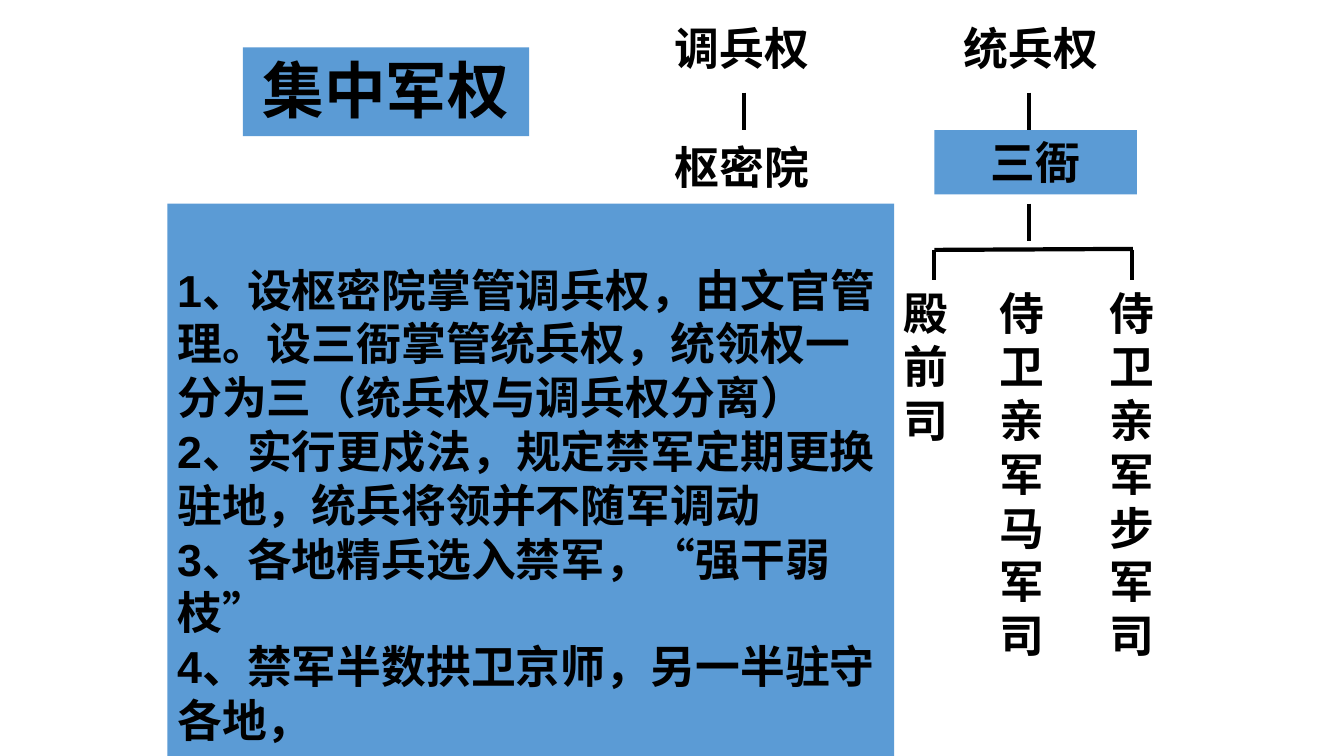
"""Build the slide on the centralisation of military power."""
import itertools

import pptx
import pptx.dml.color
import pptx.enum.shapes
import pptx.enum.text
import pptx.oxml.ns
import pptx.util
from lxml import etree

Pt = pptx.util.Pt
BLACK = pptx.dml.color.RGBColor(0x00, 0x00, 0x00)
BLUE = pptx.dml.color.RGBColor(0x5B, 0x9B, 0xD5)
CJK = "Noto Sans CJK SC"
LATIN = "Arial"
PUNCTUATION = "，。、（）“”"
CENTER = pptx.enum.text.PP_ALIGN.CENTER
LEFT = pptx.enum.text.PP_ALIGN.LEFT
INSETS = {"margin_left": Pt(7.2), "margin_right": Pt(7.2),
          "margin_top": Pt(3.6), "margin_bottom": Pt(3.6)}

MEASURES = [
    "1、设枢密院掌管调兵权，由文官管理。设三衙掌管统兵权，统领权一分为三（统兵权与调兵权分离）",
    "2、实行更戍法，规定禁军定期更换驻地，统兵将领并不随军调动",
    "3、各地精兵选入禁军，“强干弱枝”",
    "4、禁军半数拱卫京师，另一半驻守各地，",
]
HEADINGS = [("调兵权", 457.2, 11.5), ("枢密院", 457.2, 96.5), ("统兵权", 663.8, 11.5)]
OFFICES = [("殿前司", 638.6), ("侍卫亲军马军司", 707), ("侍卫亲军步军司", 785.5)]
LINES = [
    (531.4, 66.2, 531.4, 92.9),
    (735.1, 66.2, 735.1, 92.9),
    (735.1, 145.4, 735.1, 172.1),
    (667.4, 178.5, 809.3, 177.8),
    (667.4, 178.5, 667.4, 200.2),
    (808.6, 178.5, 808.6, 200.2),
]


def set_all(obj, values):
    """Set every attribute named in a dict of values."""
    for name, value in values.items():
        setattr(obj, name, value)


def is_latin(char):
    """Tell whether a character takes the Latin font."""
    return char.isdigit() or char in PUNCTUATION


def add_run(p, text, font, size):
    """Add a bold black run with Latin and East Asian fonts."""
    r = p.add_run()
    r.text = text
    set_all(r.font, {"name": font, "size": Pt(size), "bold": True})
    r.font.color.rgb = BLACK
    ea = etree.SubElement(r.font._element, pptx.oxml.ns.qn("a:ea"))
    ea.set("typeface", CJK)


def write(sp, lines, size=32, align=CENTER, wrap=True, **insets):
    """Write one paragraph per line into a shape."""
    tf = sp.text_frame
    set_all(tf, {**INSETS, "word_wrap": wrap,
                 "auto_size": pptx.enum.text.MSO_AUTO_SIZE.NONE,
                 "vertical_anchor": pptx.enum.text.MSO_ANCHOR.TOP, **insets})
    for i, line in enumerate(lines):
        p = tf.add_paragraph() if i else tf.paragraphs[0]
        set_all(p, {"alignment": align, "line_spacing": Pt(1.2 * size)})
        for latin, chars in itertools.groupby(line, is_latin):
            add_run(p, "".join(chars), LATIN if latin else CJK, size)


def fill_blue(sp):
    """Give a shape the plain blue fill."""
    sp.fill.solid()
    sp.fill.fore_color.rgb = BLUE


def add_title(s, text, left, top, width, height):
    """Place and format the title placeholder."""
    sp = s.shapes.title
    set_all(sp, {"left": Pt(left), "top": Pt(top),
                 "width": Pt(width), "height": Pt(height)})
    fill_blue(sp)
    write(sp, [text], size=44)


def add_panel(s, lines, left, top, width, height, **style):
    """Add a blue rectangle with text."""
    kind = pptx.enum.shapes.MSO_SHAPE.RECTANGLE
    sp = s.shapes.add_shape(kind, Pt(left), Pt(top), Pt(width), Pt(height))
    sp.shadow.inherit = False
    sp.line.fill.background()
    fill_blue(sp)
    write(sp, lines, **style)


def add_label(s, lines, left, top, width, height, **style):
    """Add a text box."""
    sp = s.shapes.add_textbox(Pt(left), Pt(top), Pt(width), Pt(height))
    write(sp, lines, **style)


def add_line(s, *ends):
    """Add a straight black line."""
    kind = pptx.enum.shapes.MSO_CONNECTOR.STRAIGHT
    sp = s.shapes.add_connector(kind, *map(Pt, ends))
    sp.line.width = Pt(3)
    sp.line.color.rgb = BLACK
    etree.SubElement(sp._element.spPr, pptx.oxml.ns.qn("a:effectLst"))


def main():
    """Build and save the slide."""
    prs = pptx.Presentation()
    set_all(prs, {"slide_width": Pt(960), "slide_height": Pt(540)})
    s = prs.slides.add_slide(prs.slide_layouts.get_by_name("Title Only"))
    add_title(s, "集中军权", 173.5, 33.8, 204.5, 63.4)
    for ends in LINES:
        add_line(s, *ends)
    for text, left, top in HEADINGS:
        add_label(s, [text], left, top, 145.4, 46.1)
    add_panel(s, ["三衙"], 667.4, 92.9, 144.7, 46.1)
    for name, left in OFFICES:
        add_label(s, name, left, 200.2, 46.8, 38.8 * len(name) + 7.2,
                  align=LEFT, wrap=False)
    add_panel(s, MEASURES, 119.5, 145.4, 519.1, 394.6,
              align=LEFT, margin_top=Pt(42))
    prs.save("out.pptx")


if __name__ == "__main__":
    main()
